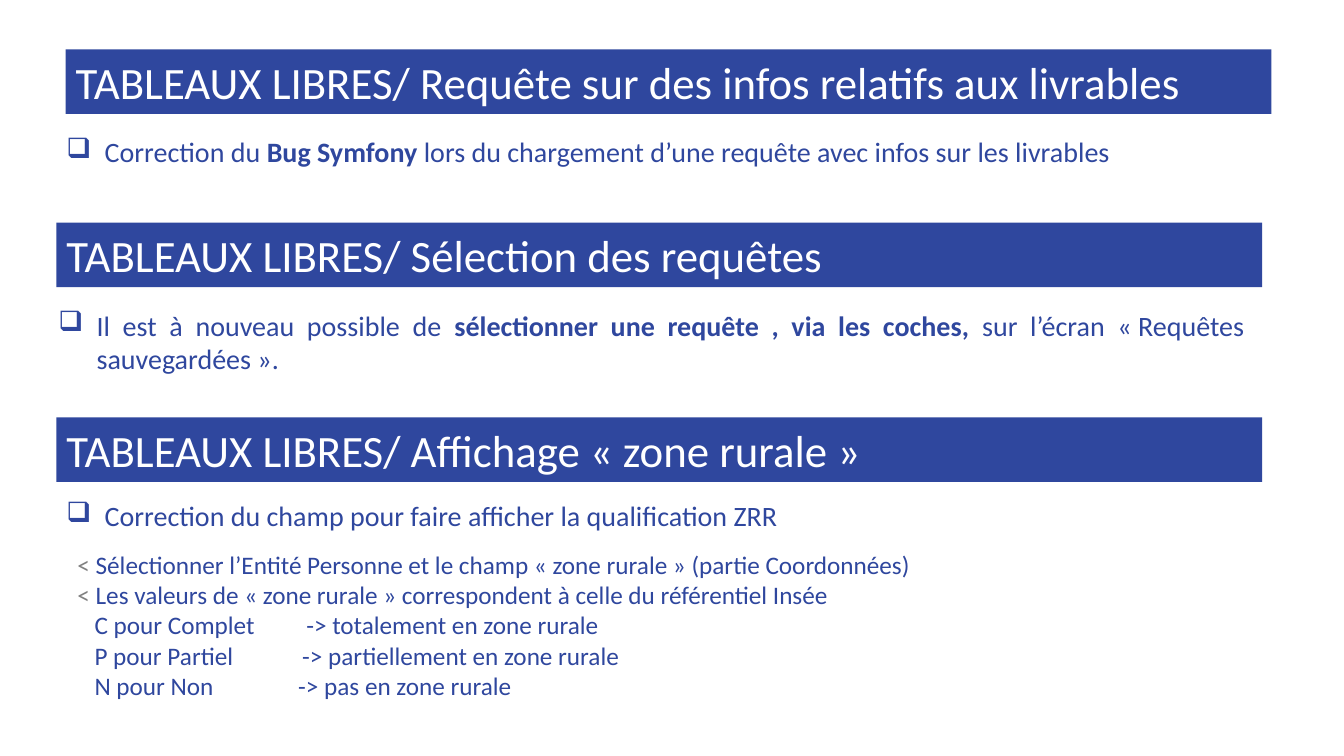
from lxml import etree
from pptx import Presentation
from pptx.dml.color import RGBColor
from pptx.enum import shapes, text
from pptx.oxml import ns
from pptx.util import Inches, Pt

HUES = {"blue": "2F479E", "grey": "808080", "white": "FFFFFF"}


def add_run(para, words, size, hue, bold=False):
    run = para.add_run()
    run.text = words
    run.font.name = "Calibri"
    run.font.size = Pt(size)
    run.font.bold = bold
    run.font.color.rgb = RGBColor.from_string(HUES[hue])


def add_point(left, top, high, after, parts):
    box = slide.shapes.add_textbox(Inches(left), Inches(top), Inches(11.96), Inches(high))
    frame = box.text_frame
    frame.word_wrap = True
    para = frame.paragraphs[0]
    para.alignment = text.PP_ALIGN.JUSTIFY
    para.space_after = Pt(after)
    props = para._p.get_or_add_pPr()
    props.set("marL", str(Inches(0.38)))
    props.set("indent", str(-Inches(0.38)))
    etree.SubElement(props, ns.qn("a:buChar")).set("char", "❑")
    for words, bold in parts:
        add_run(para, words, 20, "blue", bold)
    return frame


deck = Presentation()
deck.slide_width = Inches(13.33)
deck.slide_height = Inches(7.5)
slide = deck.slides.add_slide(deck.slide_layouts[5])

bars = [
    (0.65, 0.49, "Requête sur des infos relatifs aux livrables"),
    (0.56, 2.21, "Sélection des requêtes"),
    (0.56, 4.14, "Affichage «\u00a0zone rurale\u00a0»"),
]
for left, top, topic in bars:
    if top == 0.49:
        bar = slide.shapes.title
        bar.left, bar.top = Inches(left), Inches(top)
        bar.width, bar.height = Inches(11.96), Inches(0.64)
    else:
        bar = slide.shapes.add_shape(
            shapes.MSO_SHAPE.RECTANGLE, Inches(left), Inches(top), Inches(11.96), Inches(0.64))
        bar.shadow.inherit = False
    bar.fill.solid()
    bar.fill.fore_color.rgb = RGBColor.from_string(HUES["blue"])
    bar.line.fill.background()
    frame = bar.text_frame
    frame.word_wrap = True
    frame.auto_size = text.MSO_AUTO_SIZE.NONE
    frame.vertical_anchor = text.MSO_ANCHOR.MIDDLE
    para = frame.paragraphs[0]
    para.alignment = text.PP_ALIGN.LEFT
    add_run(para, "TABLEAUX LIBRES/ " + topic, 32, "white")

add_point(0.56, 1.29, 0.44, 10, [
    ("Correction du ", False),
    ("Bug Symfony ", True),
    ("lors du chargement d’une requête avec infos sur les livrables", False),
])
add_point(0.48, 3.01, 0.77, 10, [
    ("Il est à nouveau possible de ", False),
    ("sélectionner une requête , via les coches, ", True),
    ("sur l’écran «\u00a0Requêtes sauvegardées\u00a0».", False),
])
frame = add_point(0.56, 4.9, 2.12, 12, [
    ("Correction du champ pour faire afficher la qualification ZRR", False),
])

steps = [
    "Sélectionner l’Entité Personne et le champ «\u00a0zone rurale\u00a0» (partie Coordonnées)",
    "Les valeurs de «\u00a0zone rurale\u00a0» correspondent à celle du référentiel Insée",
]
for step in steps:
    para = frame.add_paragraph()
    para._p.get_or_add_pPr().set("marL", str(Inches(0.11)))
    add_run(para, "< ", 18, "grey")
    add_run(para, step, 18, "blue")

codes = [
    ("C pour Complet", "totalement en zone rurale", 2.1),
    ("P pour Partiel", "partiellement en zone rurale", 2.06),
    ("N pour Non", "pas en zone rurale", 2.02),
]
for code, sense, stop in codes:
    para = frame.add_paragraph()
    props = para._p.get_or_add_pPr()
    props.set("marL", str(Inches(0.28)))
    tabs = etree.SubElement(props, ns.qn("a:tabLst"))
    tab = etree.SubElement(tabs, ns.qn("a:tab"))
    tab.set("pos", str(Inches(stop)))
    tab.set("algn", "l")
    add_run(para, f"{code}\t-> {sense}", 18, "blue")

deck.save("out.pptx")
